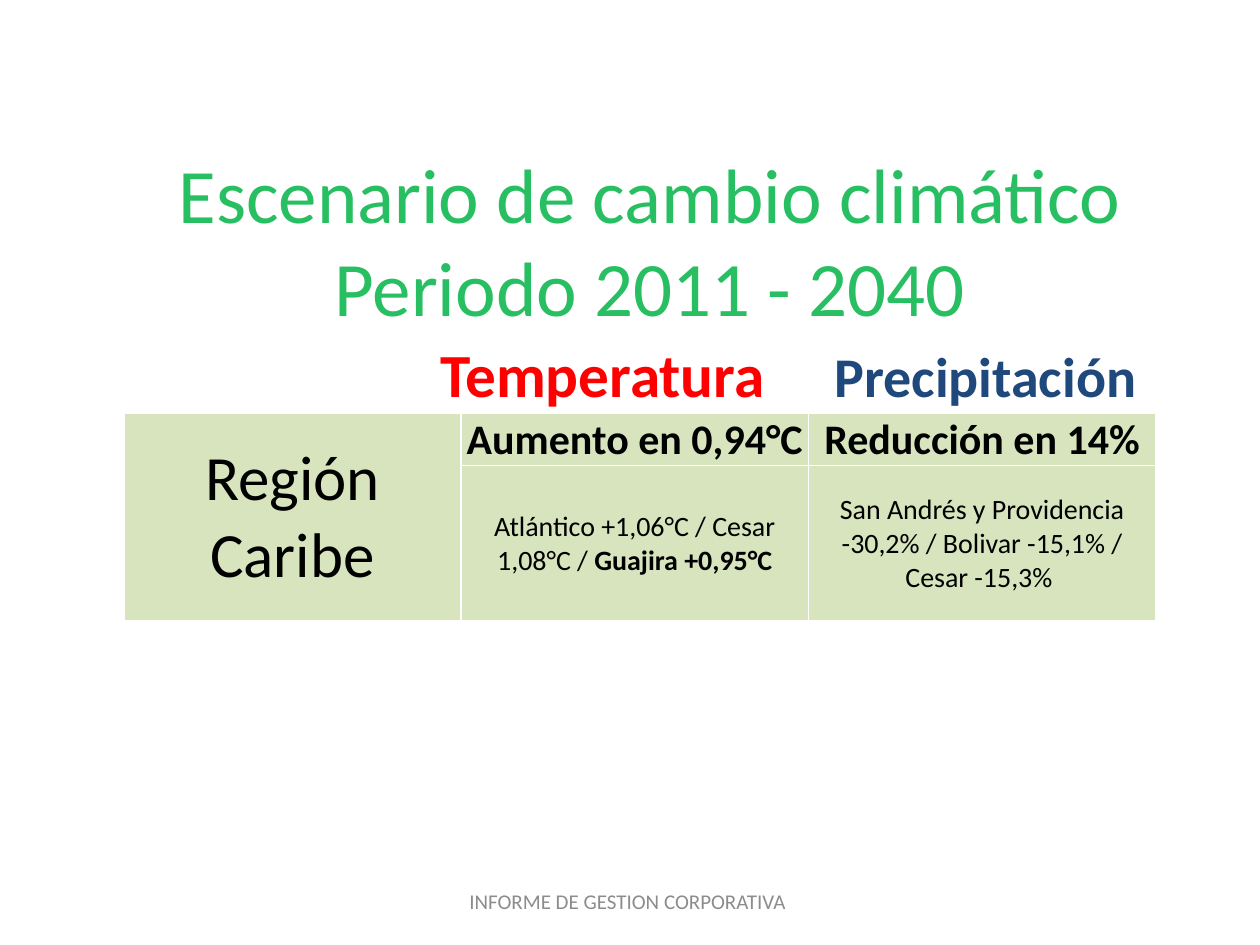
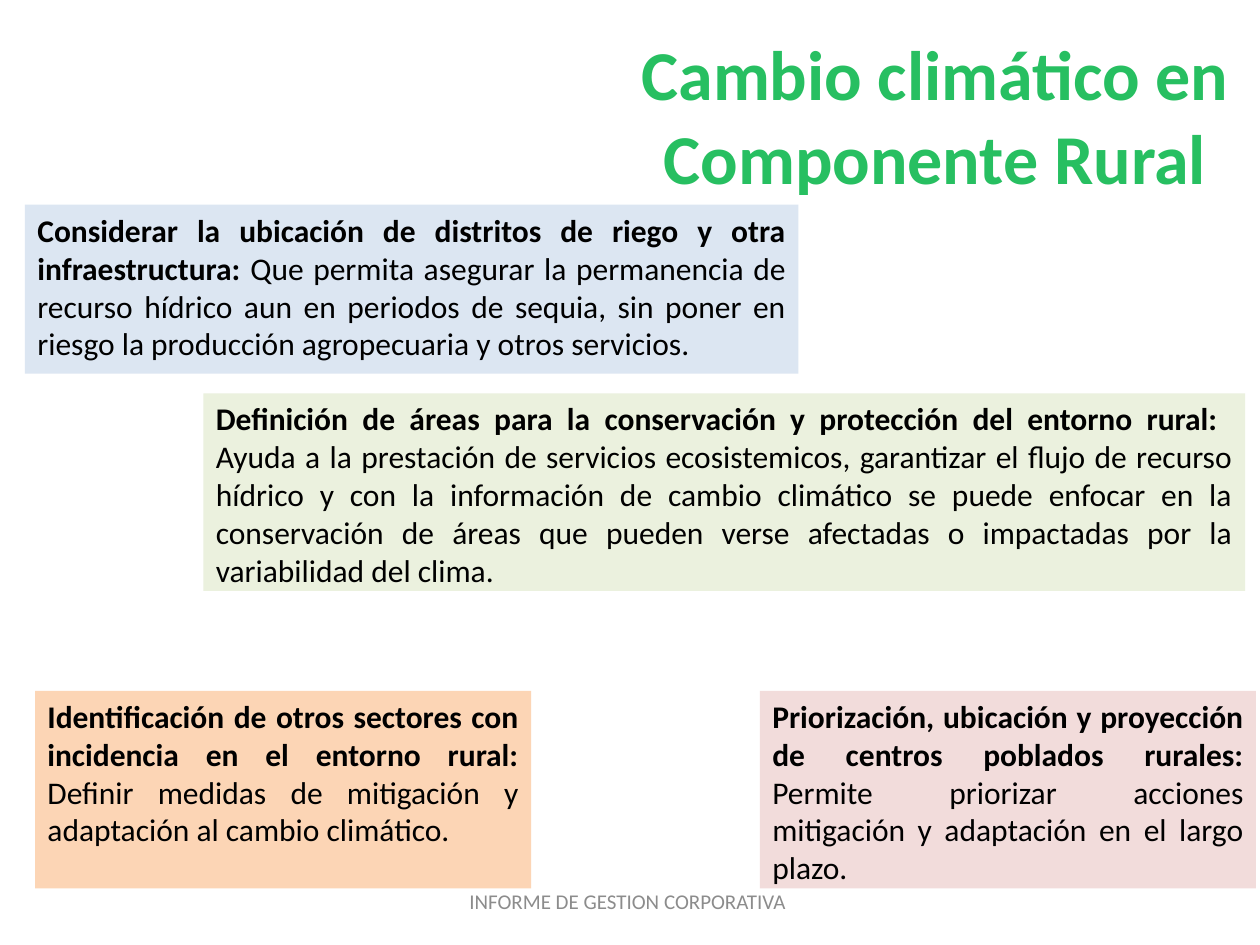
from lxml import etree
from pptx import Presentation
from pptx.dml.color import RGBColor
from pptx.enum.shapes import MSO_SHAPE
from pptx.enum.text import MSO_ANCHOR, MSO_AUTO_SIZE, PP_ALIGN
from pptx.oxml.ns import qn
from pptx.util import Pt

RECTANGLE = MSO_SHAPE.RECTANGLE
MIDDLE, TOP = MSO_ANCHOR.MIDDLE, MSO_ANCHOR.TOP
NO_AUTOFIT = MSO_AUTO_SIZE.NONE
LEFT, CENTER, JUSTIFY = PP_ALIGN.LEFT, PP_ALIGN.CENTER, PP_ALIGN.JUSTIFY

FONT = "Calibri"
BLACK = RGBColor(0x00, 0x00, 0x00)
WHITE = RGBColor(0xFF, 0xFF, 0xFF)
TITLE_GREEN = RGBColor(0x27, 0xBF, 0x61)
FOOTER_GRAY = RGBColor(0x8C, 0x8C, 0x8C)
HEAT_RED = RGBColor(0xFF, 0x00, 0x00)
RAIN_BLUE = RGBColor(0x1F, 0x49, 0x7D)
TABLE_GREEN = RGBColor(0xD7, 0xE4, 0xBD)
PALE_BLUE = RGBColor(0xDC, 0xE6, 0xF2)
PALE_GREEN = RGBColor(0xEB, 0xF1, 0xDE)
PALE_ORANGE = RGBColor(0xFC, 0xD5, 0xB5)
PALE_RED = RGBColor(0xF2, 0xDC, 0xDB)

FOOTER = "INFORME DE GESTION CORPORATIVA "


class Deck:
    def __init__(self):
        self.prs = Presentation()
        self.prs.slide_width, self.prs.slide_height = Pt(720), Pt(540)
        self.slide = None

    def add_slide(self, title, box, size, bold=False):
        self.slide = self.prs.slides.add_slide(self.prs.slide_layouts[5])
        heading = self.slide.shapes.title
        heading.left, heading.top, heading.width, heading.height = map(Pt, box)
        heading.text_frame.text = title
        self.style_frame(heading.text_frame, MIDDLE)
        self.style_paragraph(heading.text_frame.paragraphs[0], CENTER, size, TITLE_GREEN, bold)
        self.text(FOOTER, (246, 500.5, 228, 28.5), 12, FOOTER_GRAY)

    def style_frame(self, frame, anchor):
        frame.word_wrap = True
        frame.auto_size = NO_AUTOFIT
        frame.vertical_anchor = anchor

    def style_paragraph(self, paragraph, align, size, color, bold=False):
        paragraph.alignment = align
        for run in paragraph.runs:
            self.style_run(run, size, color, bold)

    def style_run(self, run, size, color, bold):
        run.font.name = FONT
        run.font.size = Pt(size)
        run.font.bold = bold
        run.font.color.rgb = color

    def add_run(self, paragraph, words, size, color, bold):
        run = paragraph.add_run()
        run.text = words
        self.style_run(run, size, color, bold)

    def text(self, words, box, size, color, bold=False, align=CENTER):
        frame = self.slide.shapes.add_textbox(*map(Pt, box)).text_frame
        frame.text = words
        self.style_frame(frame, MIDDLE)
        self.style_paragraph(frame.paragraphs[0], align, size, color, bold)
        return frame

    def column_headings(self, box, first, second, tab):
        frame = self.text(first[0], box, *first[1:], bold=True, align=LEFT)
        frame.margin_left = Pt(10)
        paragraph = frame.paragraphs[0]
        tabs = etree.SubElement(paragraph._p.get_or_add_pPr(), qn("a:tabLst"))
        etree.SubElement(tabs, qn("a:tab"), pos=str(Pt(tab)), algn="l")
        self.add_run(paragraph, "\t" + second[0], *second[1:], True)

    def panel(self, lead, detail, box, fill):
        panel = self.slide.shapes.add_shape(RECTANGLE, *map(Pt, box))
        panel.shadow.inherit = False
        panel.fill.solid()
        panel.fill.fore_color.rgb = fill
        panel.line.fill.background()
        self.style_frame(panel.text_frame, TOP)
        panel.text_frame.text = lead + " "
        paragraph = panel.text_frame.paragraphs[0]
        self.style_paragraph(paragraph, JUSTIFY, 18, BLACK, True)
        self.add_run(paragraph, detail, 18, BLACK, False)

    def table(self, left, top, widths, heights):
        table = self.slide.shapes.add_table(
            len(heights), len(widths), Pt(left), Pt(top), Pt(sum(widths)), Pt(sum(heights))
        ).table
        for column, width in zip(table.columns, widths):
            column.width = Pt(width)
        for row, height in zip(table.rows, heights):
            row.height = Pt(height)
        for cell in table.iter_cells():
            self.cell_borders(cell)
            cell.fill.solid()
            cell.fill.fore_color.rgb = TABLE_GREEN
            cell.vertical_anchor = MIDDLE
            cell.margin_left = cell.margin_right = cell.margin_top = Pt(0.75)
            cell.margin_bottom = 0
        return table

    def cell_borders(self, cell):
        properties = cell._tc.get_or_add_tcPr()
        for side in ("lnL", "lnR", "lnT", "lnB"):
            line = etree.SubElement(properties, qn("a:" + side), w=str(Pt(1)))
            fill = etree.SubElement(line, qn("a:solidFill"))
            etree.SubElement(fill, qn("a:srgbClr"), val=str(WHITE))

    def cell_text(self, cell, words, size, bold=False, ending=""):
        cell.text_frame.text = words
        paragraph = cell.text_frame.paragraphs[0]
        self.style_paragraph(paragraph, CENTER, size, BLACK, bold)
        if ending:
            self.add_run(paragraph, ending, size, BLACK, True)


def climate_scenario(deck):
    deck.add_slide("Escenario de cambio climático\vPeriodo 2011 - 2040", (76.5, 94.25, 590, 85), 44)
    region = deck.table(70.75, 236, (192.75, 198.5, 198.5), (29.5, 88.5))
    region.cell(0, 0).merge(region.cell(1, 0))
    deck.cell_text(region.cell(0, 0), "Región Caribe", 36)
    deck.cell_text(region.cell(0, 1), "Aumento en 0,94°C", 24, True)
    deck.cell_text(region.cell(0, 2), "Reducción en 14%", 24, True)
    deck.cell_text(region.cell(1, 1), "Atlántico +1,06°C / Cesar 1,08°C / ", 16, ending="Guajira +0,95°C")
    deck.cell_text(region.cell(1, 2), "San Andrés y Providencia -30,2% / Bolivar -15,1% / Cesar -15,3% ", 16)
    deck.column_headings(
        (241.5, 185, 420, 56), ("Temperatura", 35, HEAT_RED), ("Precipitación", 32, RAIN_BLUE), 225.25
    )


def rural_component(deck):
    deck.add_slide("Cambio climático en Componente Rural", (317.5, 20.5, 433.5, 90), 40, True)
    panels = (
        ("Considerar la ubicación de distritos de riego y otra infraestructura:",
         "Que permita asegurar la permanencia de recurso hídrico aun en periodos de sequia, "
         "sin poner en riesgo la producción agropecuaria y otros servicios.",
         (14.25, 117, 442, 96.5), PALE_BLUE),
        ("Definición de áreas para la conservación y protección del entorno rural:",
         " Ayuda a la prestación de servicios ecosistemicos, garantizar el flujo de recurso hídrico "
         "y con la información de cambio climático se puede enfocar en la conservación de áreas "
         "que pueden verse afectadas o impactadas por la variabilidad del clima.",
         (116.25, 224.75, 595.25, 113), PALE_GREEN),
        ("Identificación de otros sectores con incidencia en el entorno rural:",
         "Definir medidas de mitigación y adaptación al cambio climático.",
         (20, 394.75, 283.5, 113), PALE_ORANGE),
        ("Priorización, ubicación y proyección de centros poblados rurales:",
         "Permite priorizar acciones mitigación y adaptación en el largo plazo.",
         (434.25, 394.75, 283.5, 113), PALE_RED),
    )
    for lead, detail, box, fill in panels:
        deck.panel(lead, detail, box, fill)


def main():
    deck = Deck()
    climate_scenario(deck)
    rural_component(deck)
    deck.prs.save("out.pptx")


if __name__ == "__main__":
    main()
